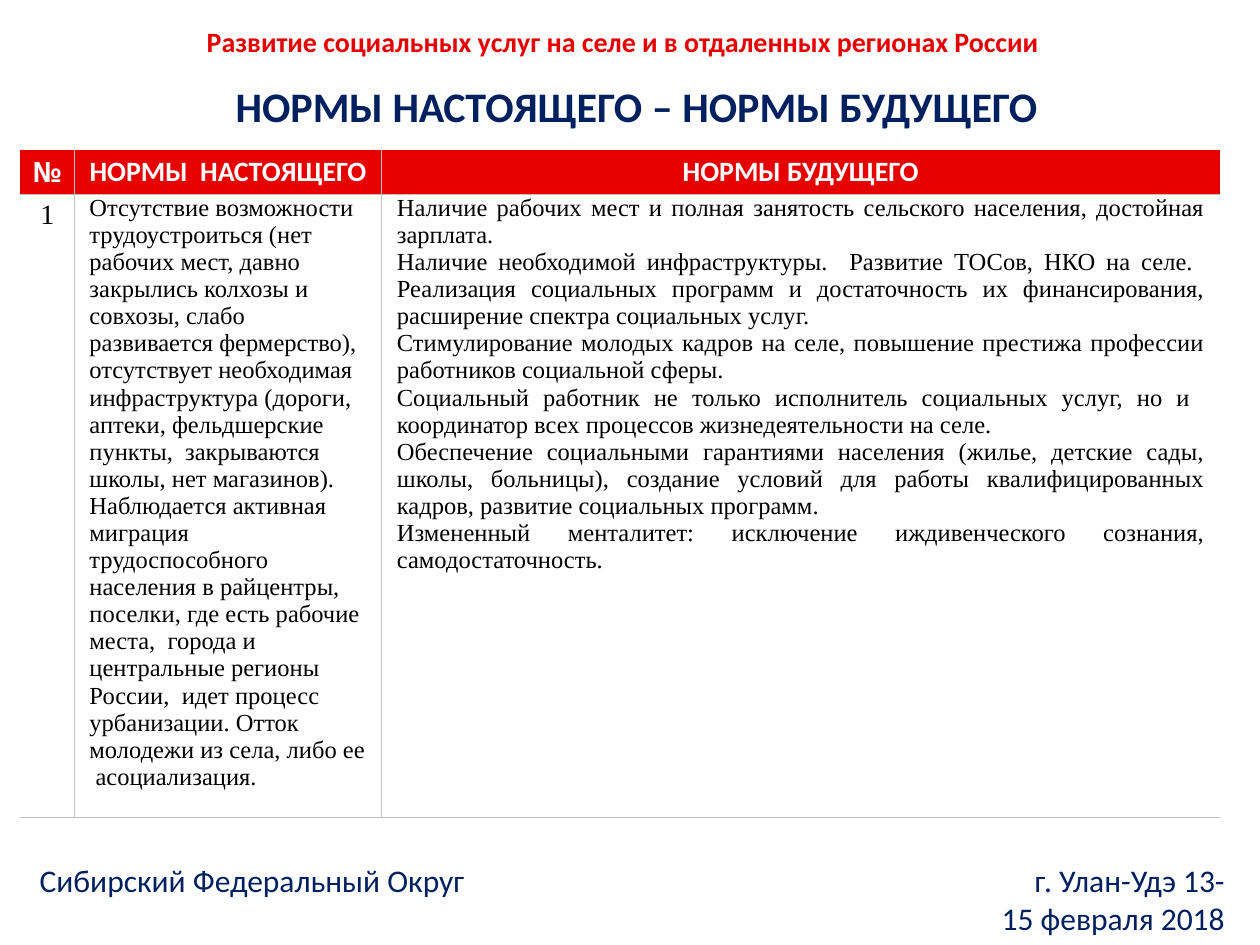
from dataclasses import dataclass
from pptx import Presentation
from pptx.dml.color import RGBColor
from pptx.enum.text import MSO_ANCHOR, MSO_AUTO_SIZE, PP_ALIGN
from pptx.oxml.ns import qn
from pptx.util import Pt
from lxml import etree

LEFT, CENTER, RIGHT, JUSTIFY = (PP_ALIGN.LEFT, PP_ALIGN.CENTER,
                                PP_ALIGN.RIGHT, PP_ALIGN.JUSTIFY)
TOP, MIDDLE = MSO_ANCHOR.TOP, MSO_ANCHOR.MIDDLE
TITLE_ONLY = 5


@dataclass(frozen=True)
class Theme:
    red: str = "E60000"
    navy: str = "002060"
    white: str = "FFFFFF"
    black: str = "000000"
    rule: str = "BFBFBF"
    sans: str = "Calibri"
    serif: str = "Times New Roman"
    number: str = "Cabin"
    title: int = 24
    footer: int = 18
    head: int = 16
    body: int = 14


T = Theme()

HEADERS = ["№", "НОРМЫ  НАСТОЯЩЕГО", "НОРМЫ БУДУЩЕГО"]
PRESENT = [
    "Отсутствие возможности трудоустроиться (нет рабочих мест, давно закрылись "
    "колхозы и совхозы, слабо развивается фермерство), отсутствует необходимая "
    "инфраструктура (дороги, аптеки, фельдшерские пункты,  закрываются школы, "
    "нет магазинов).",
    "Наблюдается активная миграция трудоспособного населения в райцентры, поселки, "
    "где есть рабочие места,  города и центральные регионы России,  идет процесс "
    "урбанизации. Отток молодежи из села, либо ее  асоциализация.",
]
FUTURE = [
    "Наличие рабочих мест и полная занятость сельского населения, достойная зарплата.",
    "Наличие необходимой инфраструктуры.  Развитие ТОСов, НКО на селе.  Реализация "
    "социальных программ и достаточность их финансирования, расширение спектра "
    "социальных услуг.",
    "Стимулирование молодых кадров на селе, повышение престижа профессии работников "
    "социальной сферы.",
    "Социальный работник не только исполнитель социальных услуг, но и  координатор "
    "всех процессов жизнедеятельности на селе.",
    "Обеспечение социальными гарантиями населения (жилье, детские сады, школы, "
    "больницы), создание условий для работы квалифицированных кадров, развитие "
    "социальных программ.",
    "Измененный менталитет: исключение иждивенческого сознания, самодостаточность.",
]


def apply(obj, values):
    for name, value in values.items():
        setattr(obj, name, value)


def write(tf, paragraphs, size, color, font, bold=False, **para):
    """Fill a text frame, one paragraph per string, in one format."""
    for i, text in enumerate(paragraphs):
        p = tf.paragraphs[0] if i == 0 else tf.add_paragraph()
        p.text = text
        apply(p, para)
        for r in p.runs:
            apply(r.font, {"size": Pt(size), "name": font, "bold": bold})
            r.font.color.rgb = RGBColor.from_string(color)


def place(sp, x, y, w, h, anchor):
    apply(sp, {"left": Pt(x), "top": Pt(y), "width": Pt(w), "height": Pt(h)})
    apply(sp.text_frame, {"word_wrap": True, "vertical_anchor": anchor,
                          "auto_size": MSO_AUTO_SIZE.NONE})
    return sp.text_frame


def add_label(s, x, y, w, h, anchor):
    return place(s.shapes.add_textbox(0, 0, 0, 0), x, y, w, h, anchor)


def set_borders(cell, edges):
    """Thin rule on the named edges, nothing on the others."""
    tc_pr = cell._tc.get_or_add_tcPr()
    for edge in "LRTB":
        ln = etree.SubElement(tc_pr, qn(f"a:ln{edge}"), w=str(Pt(0.5)))
        if edge in edges:
            fill = etree.SubElement(ln, qn("a:solidFill"))
            etree.SubElement(fill, qn("a:srgbClr"), val=T.rule)
        else:
            etree.SubElement(ln, qn("a:noFill"))


def format_cell(cell, side, vertical, anchor, edges, fill=None):
    apply(cell, {"margin_left": Pt(side), "margin_right": Pt(side),
                 "margin_top": Pt(vertical), "margin_bottom": Pt(vertical),
                 "vertical_anchor": anchor})
    set_borders(cell, edges)
    if fill:
        cell.fill.solid()
        cell.fill.fore_color.rgb = RGBColor.from_string(fill)
    else:
        cell.fill.background()


def add_norms_table(s, x, y, widths, heights):
    table = s.shapes.add_table(len(heights), len(widths), Pt(x), Pt(y),
                               Pt(sum(widths)), Pt(sum(heights))).table
    apply(table, {"first_row": True, "horz_banding": False})
    for col, w in zip(table.columns, widths):
        col.width = Pt(w)
    for row, h in zip(table.rows, heights):
        row.height = Pt(h)

    # Inner vertical rules only, plus a rule under every row
    column_edges = ["RB", "LRB", "LB"]
    for i, (text, edges) in enumerate(zip(HEADERS, column_edges)):
        cell = table.cell(0, i)
        format_cell(cell, 5, 3, MIDDLE, edges, T.red)
        write(cell.text_frame, [text], T.head, T.white,
              T.sans if i else T.number, True, alignment=CENTER)

    body = [
        ([HEADERS and "1"], T.head, 5, {"alignment": CENTER, "line_spacing": 1.15}),
        (PRESENT, T.body, 8.64, {"alignment": LEFT}),
        (FUTURE, T.body, 8.64, {"alignment": JUSTIFY}),
    ]
    for i, (texts, size, side, para) in enumerate(body):
        cell = table.cell(1, i)
        format_cell(cell, side, 0, TOP, column_edges[i] + "T")
        write(cell.text_frame, texts, size, T.black, T.serif, **para)
    # Hanging indent of the right column
    for p in table.cell(1, 2).text_frame.paragraphs:
        apply(p._p.get_or_add_pPr(), {"marL": Pt(1), "indent": -Pt(1)})


def main():
    prs = Presentation()
    prs.slide_width, prs.slide_height = Pt(720), Pt(540)
    s = prs.slides.add_slide(prs.slide_layouts[TITLE_ONLY])

    # Norms table
    add_norms_table(s, 11.5, 85.7, [31, 175.7, 478.8], [24.6, 356])

    # Title
    tf = place(s.shapes.title, 127.4, 42.5, 476, 36, TOP)
    write(tf, ["НОРМЫ НАСТОЯЩЕГО – НОРМЫ БУДУЩЕГО"], T.title, T.navy, T.sans,
          True, alignment=LEFT)

    # Topic line
    tf = add_label(s, 51, 9.4, 613.4, 28, MIDDLE)
    write(tf, ["Развитие социальных услуг на селе и в отдаленных регионах России "],
          T.head, T.red, T.sans, True, alignment=CENTER)

    # Footer: district on the left, place and date on the right
    for text, x, w, align in [
        ("Сибирский Федеральный Округ", 15.6, 320, LEFT),
        ("г. Улан-Удэ 13-\v15 февраля 2018", 547, 160, RIGHT),
    ]:
        tf = add_label(s, x, 488.5, w, 51, TOP)
        write(tf, [text], T.footer, T.navy, T.sans, alignment=align)

    prs.save("out.pptx")


if __name__ == "__main__":
    main()
